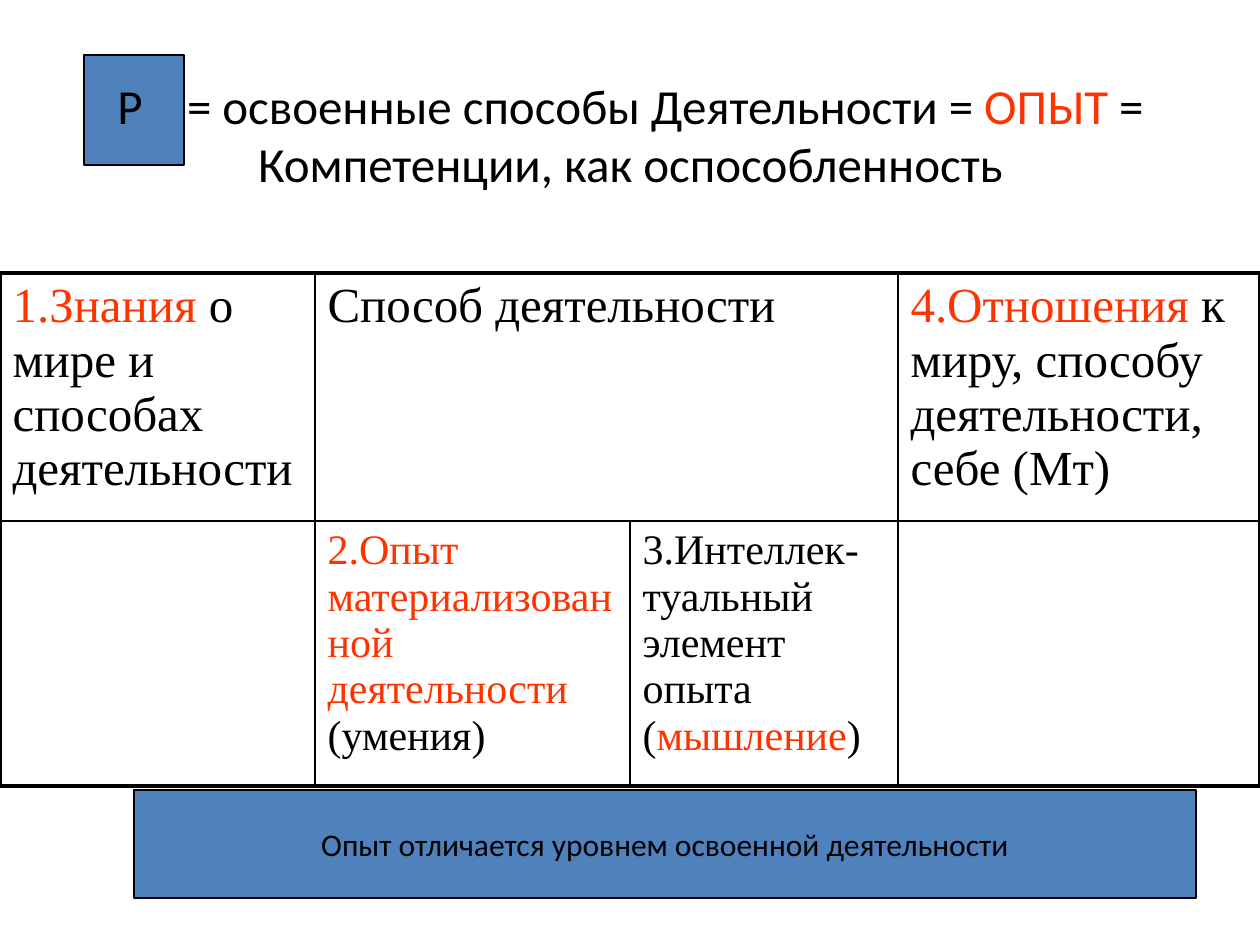
from pptx import Presentation
from pptx.dml.color import RGBColor
from pptx.enum.shapes import MSO_SHAPE as SHAPE
from pptx.enum.text import MSO_ANCHOR as ANCHOR, MSO_AUTO_SIZE as AUTO, PP_ALIGN as ALIGN
from pptx.oxml.ns import qn
from pptx.util import Emu, Pt
from lxml.etree import SubElement

EMU_PER_PX = 914400 / 126
BLACK, RED, BLUE = "000000", "FF3300", "4F81BD"


def px(n):
    return Emu(round(n * EMU_PER_PX))


def rgb(value):
    return RGBColor.from_string(value)


def write(tf, *runs, size=28, font="Calibri", align=ALIGN.CENTER, before=0):
    """Fill the first paragraph with (text, colour[, letter spacing in points]) runs."""
    p = tf.paragraphs[0]
    p.alignment = align
    p.space_before = Pt(before)
    for text, color, *spacing in runs:
        r = p.add_run()
        r.text = text
        r.font.size, r.font.name = Pt(size), font
        r.font.color.rgb = rgb(color)
        if spacing:
            r.font._element.set("spc", str(spacing[0] * 100))


def set_border(cell, side, width):
    ln = SubElement(cell._tc.get_or_add_tcPr(), qn(f"a:ln{side}"), w=str(Pt(width)))
    fill = SubElement(ln, qn("a:solidFill"))
    SubElement(fill, qn("a:srgbClr"), val=BLACK)


class SlideBuilder:
    outer, inner = 2.25, 1
    cell_font = "Times New Roman"

    def __init__(self, prs):
        self.s = prs.slides.add_slide(prs.slide_layouts[5])

    def box(self, x, y, w, h):
        sp = self.s.shapes.add_shape(SHAPE.RECTANGLE, px(x), px(y), px(w), px(h))
        sp.shadow.inherit = False
        sp.fill.solid()
        sp.fill.fore_color.rgb = rgb(BLUE)
        sp.line.color.rgb = rgb(BLACK)
        sp.line.width = Pt(0.75)
        return sp

    def title(self, x, y, w, h, *runs):
        sp = self.s.shapes.title
        sp.left, sp.top, sp.width, sp.height = px(x), px(y), px(w), px(h)
        tf = sp.text_frame
        tf.auto_size, tf.vertical_anchor = AUTO.NONE, ANCHOR.MIDDLE
        write(tf, *runs)
        # Bring the title in front of the box behind its first letter
        self.s.shapes._spTree.append(sp._element)

    def table(self, x, y, cols, rows, sizes, texts, merges):
        frame = self.s.shapes.add_table(len(rows), len(cols), px(x), px(y),
                                        px(sum(cols)), px(sum(rows)))
        tbl = frame.table
        tbl.first_row = tbl.horz_banding = False
        for col, w in zip(tbl.columns, cols):
            col.width = px(w)
        for row, h in zip(tbl.rows, rows):
            row.height = px(h)
        for i in range(len(rows)):
            for j in range(len(cols)):
                cell = tbl.cell(i, j)
                edges = {"L": j == 0, "R": j == len(cols) - 1,
                         "T": i == 0, "B": i == len(rows) - 1}
                for side, is_outer in edges.items():
                    set_border(cell, side, self.outer if is_outer else self.inner)
                cell.fill.background()
                if (i, j) in texts:
                    write(cell.text_frame, *texts[i, j], size=sizes[i],
                          font=self.cell_font, align=ALIGN.LEFT, before=sizes[i] * 0.2)
        for first, last in merges:
            tbl.cell(*first).merge(tbl.cell(*last))


def main():
    prs = Presentation()
    prs.slide_width, prs.slide_height = px(1260), px(945)
    b = SlideBuilder(prs)

    # Heading
    b.box(84, 55, 100, 110)
    b.title(95, 55, 1071, 158,
            ("Р", BLACK), (" ", BLACK, 19),
            ("= освоенные способы Деятельности = ", BLACK),
            ("ОПЫТ", RED),
            (" = Компетенции, как оспособленность", BLACK))

    # Elements of experience
    texts = {
        (0, 0): [("1.Знания ", RED), ("о мире и способах деятельности", BLACK)],
        (0, 1): [("Способ деятельности", BLACK)],
        (0, 3): [("4.Отношения", RED),
                 (" к миру, способу деятельности, себе (Мт)", BLACK)],
        (1, 1): [("2.Опыт материализованной деятельности ", RED), ("(умения)", BLACK)],
        (1, 2): [("3.Интеллек-туальный элемент опыта (", BLACK),
                 ("мышление", RED), (")", BLACK)],
    }
    b.table(0, 273, cols=[315, 315, 268, 362], rows=[248, 265], sizes=[28, 24],
            texts=texts, merges=[((0, 1), (0, 2))])

    # Conclusion
    tf = b.box(134, 790, 1062, 108).text_frame
    tf.word_wrap, tf.vertical_anchor = False, ANCHOR.MIDDLE
    write(tf, ("Опыт отличается уровнем освоенной деятельности", BLACK), size=18)

    prs.save("out.pptx")


if __name__ == "__main__":
    main()
